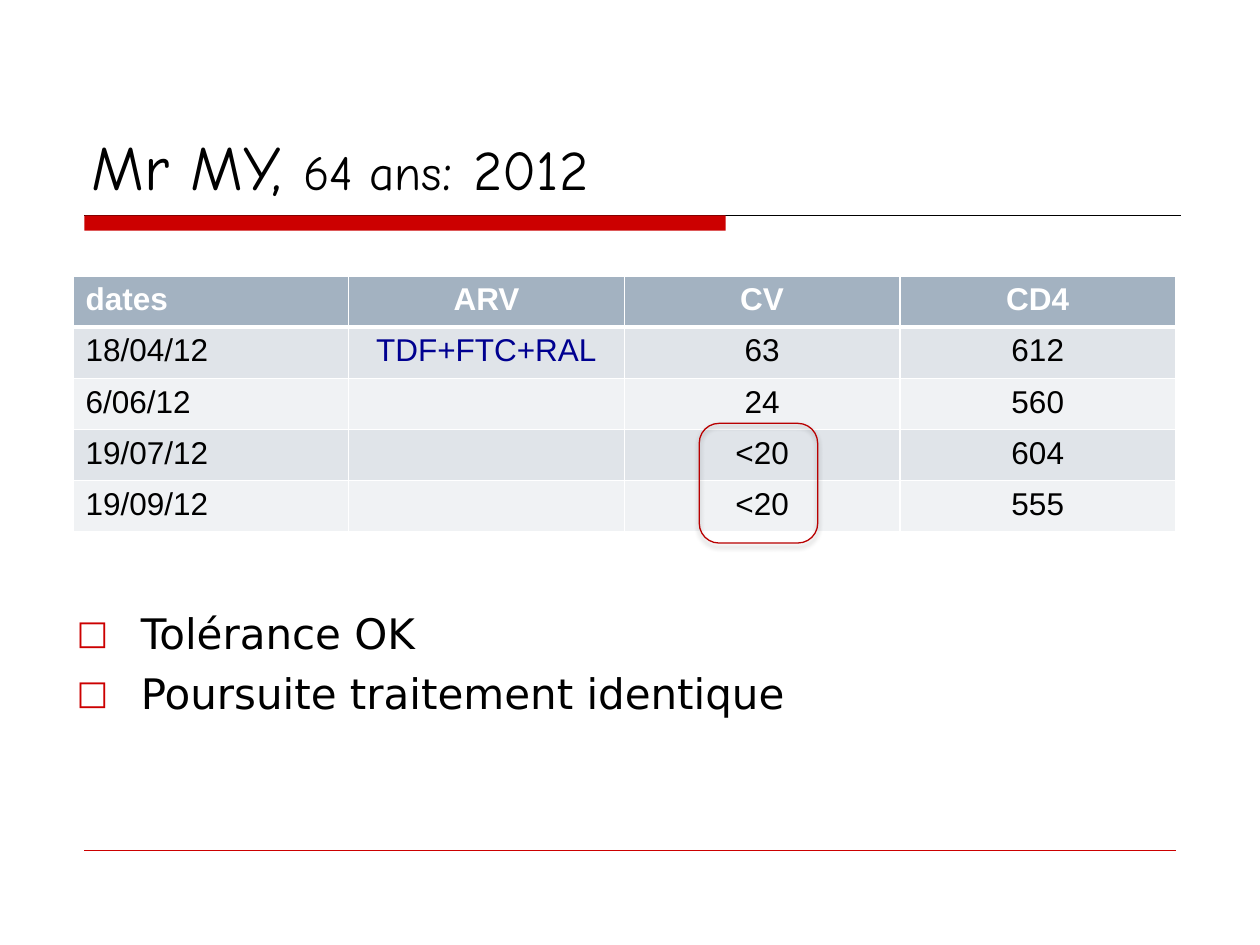
"""Build a patient follow-up slide with a results table and conclusions."""
import pptx
import pptx.util
import pptx.dml.color
import pptx.enum.shapes
import pptx.enum.text
import pptx.oxml
import pptx.oxml.ns

Inches, Pt = pptx.util.Inches, pptx.util.Pt
RGBColor = pptx.dml.color.RGBColor
SHAPE = pptx.enum.shapes.MSO_SHAPE
ALIGN = pptx.enum.text.PP_ALIGN
ANCHOR = pptx.enum.text.MSO_ANCHOR

BLACK = RGBColor(0, 0, 0)
WHITE = RGBColor(255, 255, 255)
RED = RGBColor(0xCC, 0, 0)
DARK_RED = RGBColor(0xB9, 0, 0)
NAVY = RGBColor(0, 0, 0x90)
HEADER = RGBColor(0xA3, 0xB2, 0xC1)
BANDS = RGBColor(0xF0, 0xF2, 0xF4), RGBColor(0xE0, 0xE4, 0xE9)

TITLE = [("Mr MY, ", 36), ("64 ans", 28), (":", 32), (" ", 36), ("2012", 32)]
RESULTS = [
    ("dates", "ARV", "CV", "CD4"),
    ("18/04/12", "TDF+FTC+RAL", "63", "612"),
    ("6/06/12", "", "24", "560"),
    ("19/07/12", "", "<20", "604"),
    ("19/09/12", "", "<20", "555"),
]
CONCLUSIONS = ["Tolérance OK", "Poursuite traitement identique"]
TABLE_BOX = 0.58, 2.19, 8.75, 2.03
INDENT = 0.51


def add_xml(parent, xml):
    ns = pptx.oxml.ns.nsdecls("a")
    parent.append(pptx.oxml.parse_xml(xml.replace(">", f" {ns}>", 1) if "/>" not in xml.split(">")[0] + ">"
                                      else xml.replace("/>", f" {ns}/>", 1)))


def style(r, font, size, color, bold=False):
    r.font.name, r.font.size, r.font.bold = font, Pt(size), bold
    r.font.color.rgb = color


def add_text_box(slide, box, anchor=ANCHOR.TOP):
    tf = slide.shapes.add_textbox(*map(Inches, box)).text_frame
    tf.word_wrap, tf.vertical_anchor = True, anchor
    return tf


def add_rule(slide, left, right, y, color, width):
    line = slide.shapes.add_connector(
        pptx.enum.shapes.MSO_CONNECTOR.STRAIGHT, *map(Inches, (left, y, right, y)))
    line.line.color.rgb, line.line.width = color, Pt(width)
    add_xml(line._element.spPr, "<a:effectLst/>")


def add_title(slide):
    p = add_text_box(slide, (0.63, 0.33, 8.75, 1.33), ANCHOR.BOTTOM).paragraphs[0]
    for text, size in TITLE:
        r = p.add_run()
        r.text = text
        style(r, "Comic Neue", size, BLACK)


def add_bar(slide):
    bar = slide.shapes.add_shape(SHAPE.RECTANGLE, *map(Inches, (0.67, 1.71, 5.09, 0.12)))
    bar.shadow.inherit = False
    bar.fill.solid()
    bar.fill.fore_color.rgb = RED
    bar.line.fill.background()


def add_results(slide):
    rows, cols = len(RESULTS), len(RESULTS[0])
    table = slide.shapes.add_table(rows, cols, *map(Inches, TABLE_BOX)).table
    for i, values in enumerate(RESULTS):
        for j, value in enumerate(values):
            cell = table.cell(i, j)
            cell.text_frame.text = value
            p = cell.text_frame.paragraphs[0]
            p.font.size = Pt(18)
            p.alignment = ALIGN.CENTER if j else ALIGN.LEFT
            color = WHITE if i == 0 else NAVY if j == 1 else BLACK
            for r in p.runs:
                style(r, "Arial", 18, color, i == 0)
            for side in "LRTB":
                heavy = (i, side) in ((0, "B"), (1, "T"))
                add_xml(cell._tc.get_or_add_tcPr(),
                        f'<a:ln{side} w="{Pt(3 if heavy else 1)}"><a:solidFill>'
                        f'<a:srgbClr val="{WHITE}"/></a:solidFill></a:ln{side}>')
            cell.fill.solid()
            cell.fill.fore_color.rgb = BANDS[i % 2] if i else HEADER


def add_highlight(slide):
    sp = slide.shapes.add_shape(SHAPE.ROUNDED_RECTANGLE, *map(Inches, (5.55, 3.36, 0.94, 0.95)))
    sp.fill.background()
    sp.line.color.rgb, sp.line.width = DARK_RED, Pt(0.75)
    add_xml(sp._element.spPr,
            f'<a:effectLst><a:outerShdw blurRad="{Pt(3.1)}" dist="{Pt(1.8)}" dir="5400000" rotWithShape="0">'
            '<a:srgbClr val="000000"><a:alpha val="35000"/></a:srgbClr></a:outerShdw></a:effectLst>')


def add_conclusions(slide):
    tf = add_text_box(slide, (0.51, 4.77, 8.75, 1.57))
    tf.text = "\n".join(CONCLUSIONS)
    for p in tf.paragraphs:
        p.space_before = Pt(5.6)
        style(p.runs[0], "DejaVu Sans", 24, BLACK)
        pPr = p._p.get_or_add_pPr()
        pPr.set("marL", str(Inches(INDENT)))
        pPr.set("indent", str(-Inches(INDENT)))
        for xml in (f'<a:buClr><a:srgbClr val="{RED}"/></a:buClr>', '<a:buSzPct val="80000"/>',
                    '<a:buFont typeface="DejaVu Sans"/>', '<a:buChar char="□"/>'):
            add_xml(pPr, xml)


def main():
    prs = pptx.Presentation()
    prs.slide_width, prs.slide_height = Inches(10), Inches(7.5)
    slide = prs.slides.add_slide(prs.slide_layouts[6])
    add_rule(slide, 0.67, 9.37, 1.71, BLACK, 0.75)
    add_bar(slide)
    add_rule(slide, 0.67, 9.33, 6.75, RED, 0.25)
    add_title(slide)
    add_conclusions(slide)
    add_results(slide)
    add_highlight(slide)
    prs.save("out.pptx")


if __name__ == "__main__":
    main()
